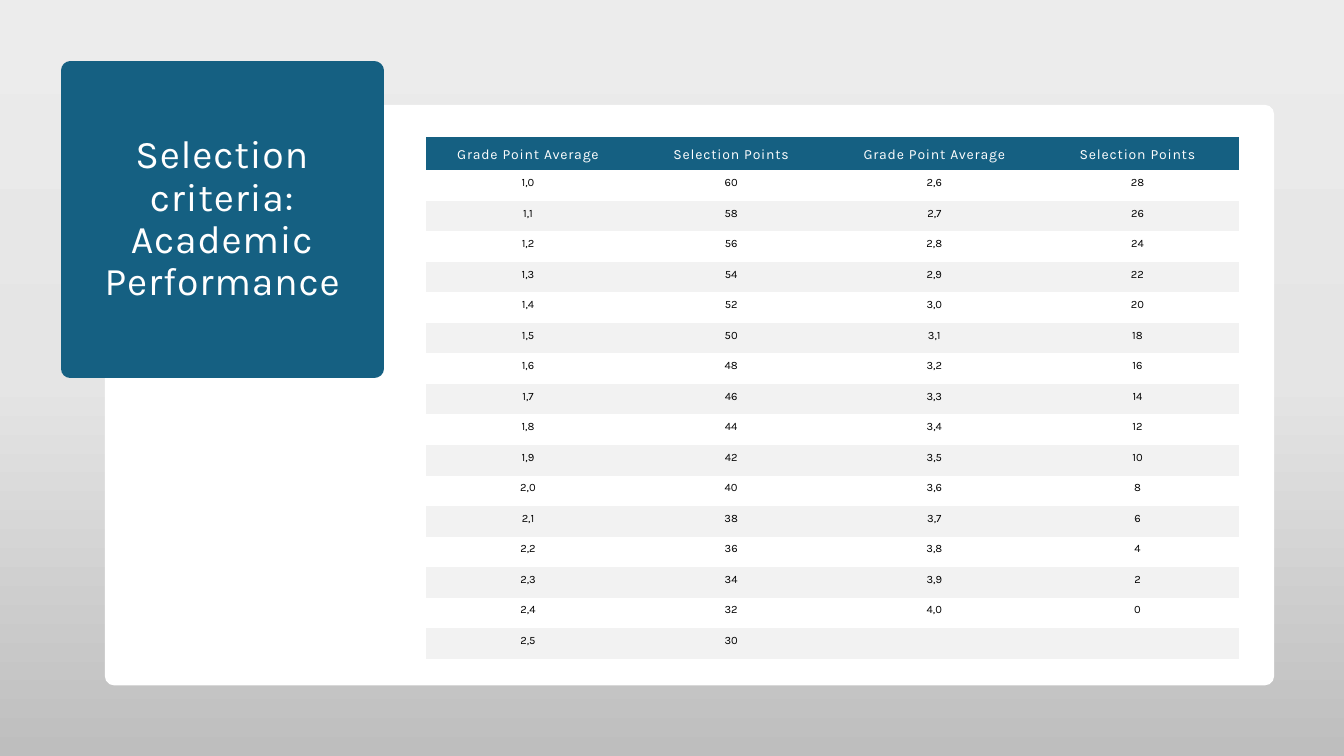
from copy import deepcopy
from dataclasses import dataclass

from lxml.etree import SubElement
from pptx import Presentation
from pptx.dml.color import RGBColor as Color
from pptx.enum.shapes import MSO_SHAPE as Shape
from pptx.enum.text import MSO_ANCHOR as Anchor, MSO_AUTO_SIZE as AutoSize, PP_ALIGN as Align
from pptx.oxml.ns import qn
from pptx.util import Inches, Pt

FONT = "Karla"
COLOURS = {
    "blue": "156082", "white": "FFFFFF", "black": "000000", "band": "F2F2F2",
    "top": "ECECEC", "middle": "E5E5E5", "bottom": "BEBEBE",
}
PLAIN_TABLE = "{2D5ABB26-0587-4C30-8999-92F81FD0307C}"
HEADINGS = ["Grade Point Average", "Selection Points"]
GRADES = 31
GRADE_ROWS = 16
HEADER_HEIGHT, ROW_HEIGHT = 4.4, 4.04

deck = Presentation()
deck.slide_width, deck.slide_height = Inches(13.33), Inches(7.5)


def across(share: float) -> int:
    return int(deck.slide_width * share / 100)


def down(share: float) -> int:
    return int(deck.slide_height * share / 100)


@dataclass
class Block:
    """A rectangle in percent of the slide's width and height."""
    left: float
    top: float
    width: float
    height: float

    def lengths(self) -> tuple[int, int, int, int]:
        return across(self.left), down(self.top), across(self.width), down(self.height)


@dataclass
class TextStyle:
    size: float
    colour: str
    spacing: float = 0


CARD = Block(7.8, 13.87, 87, 76.8)
TITLE = Block(5.25, 9.33, 22.58, 39.47)
TABLE = Block(31.73, 18.13, 60.47, HEADER_HEIGHT + GRADE_ROWS * ROW_HEIGHT)
TITLE_STYLE = TextStyle(28, "white", 0.6)
HEADER_STYLE = TextStyle(10, "white", 0.6)
GRADE_STYLE = TextStyle(8, "black")


def colour(name: str) -> Color:
    return Color.from_string(COLOURS[name])


def paint(fill, name: str) -> None:
    fill.solid()
    fill.fore_color.rgb = colour(name)


def format_text(para, style: TextStyle) -> None:
    para.alignment = Align.CENTER
    para.font.name = FONT
    para.font.size = Pt(style.size)
    para.font.color.rgb = colour(style.colour)
    properties = para._p.pPr.find(qn("a:defRPr"))
    properties.set("spc", str(int(style.spacing * 100)))
    if not para.runs:
        SubElement(para._p, qn("a:endParaRPr")).set("sz", str(int(style.size * 100)))


def fill_cell(cell, text: str, style: TextStyle, fill: str, anchor: Anchor) -> None:
    cell.margin_left = cell.margin_right = cell.margin_top = Inches(0.06)
    cell.margin_bottom = Inches(0.03)
    cell.vertical_anchor = anchor
    paint(cell.fill, fill)
    cell.text = text
    format_text(cell.text_frame.paragraphs[0], style)


def grade_pair(index: int) -> list[str]:
    """Grades rise by a tenth from 1,0 while points fall by two from 60."""
    if index >= GRADES:
        return ["", ""]
    return [f"{1 + index / 10:.1f}".replace(".", ","), str(60 - 2 * index)]


def add_background(page) -> None:
    fill = page.background.fill
    fill.gradient()
    fill.gradient_angle = 270
    stops = page._element.find(".//" + qn("a:gsLst"))
    stops.insert(1, deepcopy(stops[0]))
    for stop, share, name in zip(fill.gradient_stops, (0, 0.5, 1), ("top", "middle", "bottom")):
        stop.position = share
        stop.color.rgb = colour(name)


def add_card(page) -> None:
    card = page.shapes.add_shape(Shape.ROUNDED_RECTANGLE, *CARD.lengths())
    card.adjustments[0] = 0.016
    card.shadow.inherit = False
    paint(card.fill, "white")
    card.line.fill.background()
    page.shapes.title._element.addprevious(card._element)


def add_title(page) -> None:
    box = page.shapes.title
    box.left, box.top, box.width, box.height = TITLE.lengths()
    paint(box.fill, "blue")
    paint(box.line.fill, "blue")
    box.line.width = Pt(13.75)
    SubElement(box.line._ln, qn("a:round"))
    frame = box.text_frame
    frame.text = "Selection criteria: Academic Performance"
    frame.word_wrap = True
    frame.auto_size = AutoSize.NONE
    frame.vertical_anchor = Anchor.MIDDLE
    para = frame.paragraphs[0]
    para.line_spacing = 0.9
    format_text(para, TITLE_STYLE)


def add_grade_table(page) -> None:
    rows = [HEADINGS * 2]
    rows += [grade_pair(i) + grade_pair(i + GRADE_ROWS) for i in range(GRADE_ROWS)]
    table = page.shapes.add_table(len(rows), len(rows[0]), *TABLE.lengths()).table
    table._tbl.tblPr.find(qn("a:tableStyleId")).text = PLAIN_TABLE
    table.horz_banding = False
    for number, texts in enumerate(rows):
        header = number == 0
        table.rows[number].height = down(HEADER_HEIGHT if header else ROW_HEIGHT)
        style = HEADER_STYLE if header else GRADE_STYLE
        fill = "blue" if header else "white" if number % 2 else "band"
        anchor = Anchor.MIDDLE if header else Anchor.TOP
        for cell, text in zip(table.rows[number].cells, texts):
            fill_cell(cell, text, style, fill, anchor)


def main() -> None:
    page = deck.slides.add_slide(deck.slide_layouts[5])  # Title Only
    add_background(page)
    add_card(page)
    add_title(page)
    add_grade_table(page)
    deck.save("out.pptx")


if __name__ == "__main__":
    main()
